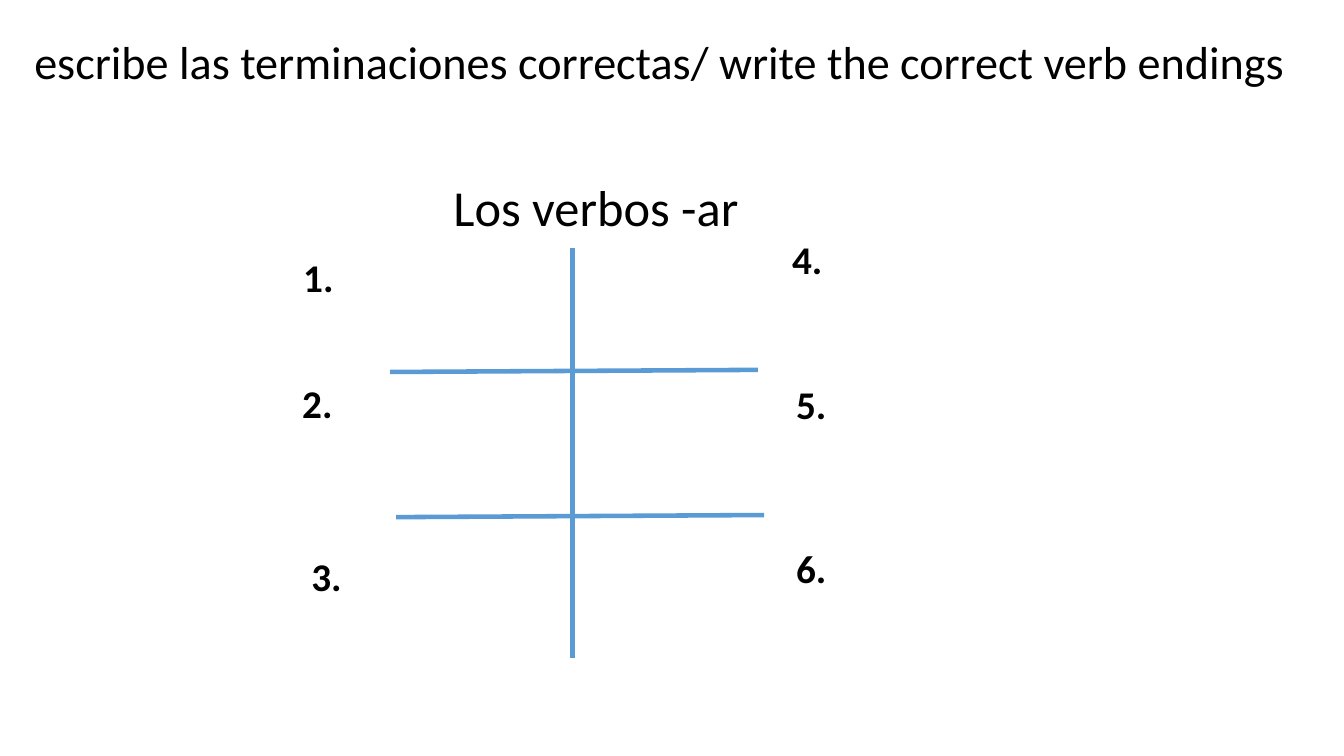
from lxml.etree import SubElement
from pptx import Presentation
from pptx.dml.color import RGBColor
from pptx.enum.shapes import MSO_CONNECTOR as Connector
from pptx.enum.text import MSO_ANCHOR as Anchor, MSO_AUTO_SIZE as AutoSize, PP_ALIGN as Align
from pptx.oxml.ns import qn
from pptx.util import Pt

TITLE_ONLY = 5


def color(code):
    return RGBColor.from_string(code)


class VerbSlide:
    font = "Calibri"
    ink = "000000"
    rule = "5B9BD5"

    def __init__(self, deck):
        self.page = deck.slides.add_slide(deck.slide_layouts[TITLE_ONLY])

    def set_text(self, shape, text, size, bold=False, wrap=True):
        """Fill a shape with one left-aligned line of text."""
        frame = shape.text_frame
        frame.word_wrap = wrap
        frame.auto_size = AutoSize.NONE
        frame.vertical_anchor = Anchor.TOP
        para = frame.paragraphs[0]
        para.alignment = Align.LEFT
        span = para.add_run()
        span.text = text
        span.font.name = self.font
        span.font.size = Pt(size)
        span.font.bold = bold
        span.font.color.rgb = color(self.ink)

    def title(self, text, left, top, width, height, size):
        shape = self.page.shapes.title
        shape.left, shape.top = Pt(left), Pt(top)
        shape.width, shape.height = Pt(width), Pt(height)
        self.set_text(shape, text, size)

    def label(self, text, left, top, width, height, size, bold=False, wrap=True):
        box = self.page.shapes.add_textbox(Pt(left), Pt(top), Pt(width), Pt(height))
        self.set_text(box, text, size, bold, wrap)

    def line(self, x1, y1, x2, y2, weight):
        line = self.page.shapes.add_connector(
            Connector.STRAIGHT, Pt(x1), Pt(y1), Pt(x2), Pt(y2))
        line.line.color.rgb = color(self.rule)
        line.line.width = Pt(weight)
        SubElement(line._element.spPr, qn("a:effectLst"))


def main():
    deck = Presentation()
    deck.slide_width, deck.slide_height = Pt(960), Pt(540)
    slide = VerbSlide(deck)

    slide.title("escribe las terminaciones correctas/ write the correct verb endings",
                17.3, 20.2, 950.4, 47.5, size=33)
    slide.label("Los verbos -ar", 316.8, 122.4, 218.9, 51.1, size=36, wrap=False)

    slide.line(409, 177.1, 409, 470.2, weight=3)
    for left, top in [(278.6, 265.7), (283, 369.4)]:
        slide.line(left, top, left + 262.8, top - 1.5, weight=3.25)

    number_corners = [(209.5, 177.1), (208.8, 267.1), (215.3, 391),
                      (558.7, 164.9), (561.6, 267.8), (561.6, 385.2)]
    for number, (left, top) in enumerate(number_corners, start=1):
        slide.label(f"{number}.", left, top, 51.1, 41, size=28, bold=True)

    deck.save("out.pptx")


if __name__ == "__main__":
    main()
